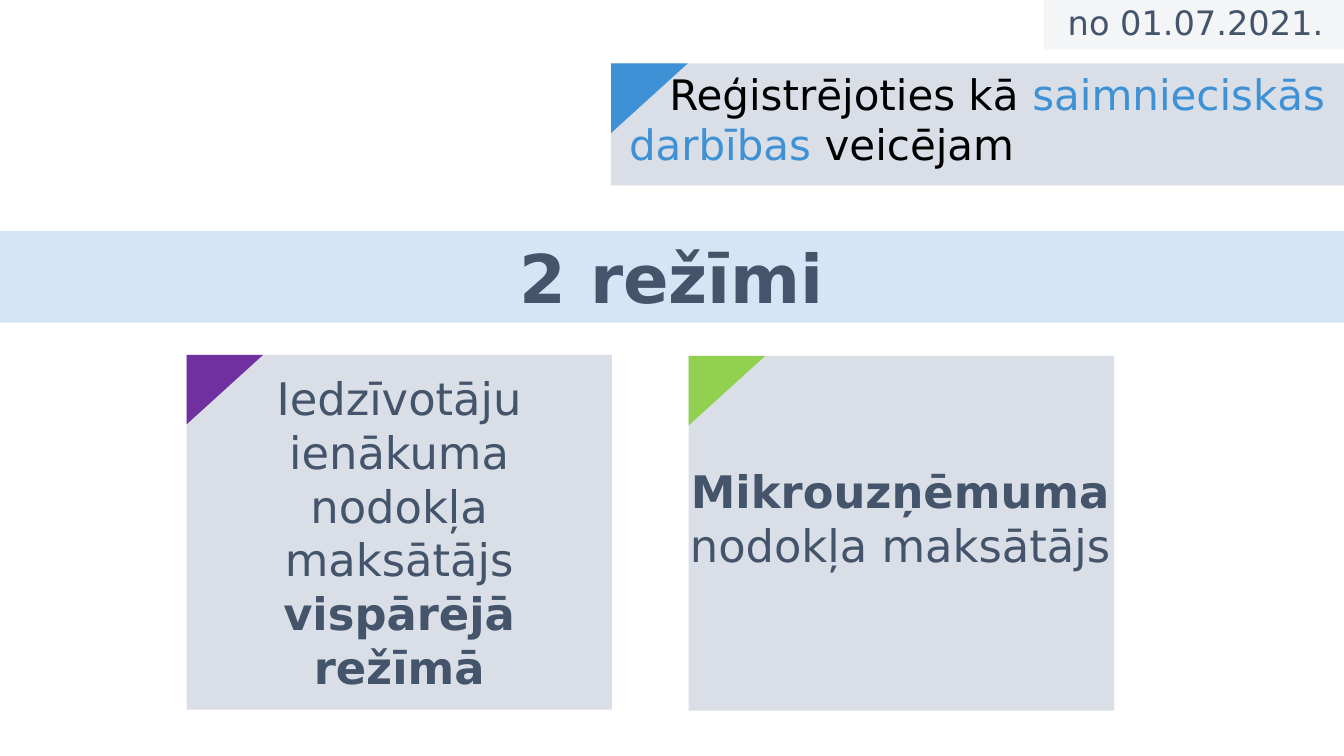
from dataclasses import dataclass

from lxml import etree
from pptx import Presentation
from pptx.dml.color import RGBColor
from pptx.enum.shapes import MSO_SHAPE
from pptx.enum.text import MSO_ANCHOR, MSO_AUTO_SIZE, PP_ALIGN
from pptx.oxml.ns import qn
from pptx.util import Inches, Pt

RECTANGLE, TRIANGLE = MSO_SHAPE.RECTANGLE, MSO_SHAPE.ISOSCELES_TRIANGLE
LEFT, CENTER, RIGHT = PP_ALIGN.LEFT, PP_ALIGN.CENTER, PP_ALIGN.RIGHT
TOP, MIDDLE = MSO_ANCHOR.TOP, MSO_ANCHOR.MIDDLE
NO_AUTOFIT = MSO_AUTO_SIZE.NONE

FONT = "DejaVu Sans"
SLATE, BLACK, BLUE = "44546A", "000000", "3F91D5"
GREY, PURPLE, GREEN = "D6DCE5", "7030A0", "92D050"
SLIDE_WIDTH, SLIDE_HEIGHT = 13.33, 7.5
CORNER_WIDTH, CORNER_HEIGHT = 0.76, 0.69


@dataclass(frozen=True)
class Area:
    """A rectangle on the slide, in inches."""
    left: float
    top: float
    width: float
    height: float

    def lengths(self) -> list:
        """Return the four measures as slide lengths."""
        return [Inches(v) for v in (self.left, self.top, self.width, self.height)]


@dataclass(frozen=True)
class Span:
    """A stretch of text in one format."""
    text: str
    color: str = SLATE
    bold: bool = False


@dataclass(frozen=True)
class Card:
    """A grey panel with a coloured corner and a text box."""
    panel: Area
    corner_color: str
    text_area: Area
    spans: tuple
    size: int
    align: PP_ALIGN = CENTER
    indent: float = 0


CARDS = (
    Card(Area(1.85, 3.52, 4.22, 3.52), PURPLE, Area(1.85, 3.63, 4.22, 3.33),
         (Span("Iedzīvotāju ienākuma nodokļa maksātājs "),
          Span("vispārējā režīmā", bold=True)), 32),
    Card(Area(6.06, 0.63, 7.27, 1.21), BLUE, Area(6.14, 0.63, 7.19, 1.11),
         (Span("Reģistrējoties kā ", BLACK), Span("saimnieciskās darbības ", BLUE),
          Span("veicējam", BLACK)), 30, LEFT, 0.4),
    Card(Area(6.83, 3.53, 4.22, 3.52), GREEN, Area(6.67, 4.55, 4.52, 1.18),
         (Span("Mikrouzņēmuma", bold=True), Span(" nodokļa maksātājs")), 32),
)


def paint(shape, color: str, opacity: int = 100) -> None:
    """Fill a shape with a colour at an opacity in percent."""
    shape.fill.solid()
    shape.fill.fore_color.rgb = RGBColor.from_string(color)
    shape.line.fill.background()
    if opacity < 100:
        tint = shape.fill._xPr.find(qn("a:solidFill"))[0]
        etree.SubElement(tint, qn("a:alpha"), val=str(opacity * 1000))


def write(shape, spans: tuple, size: int, align: PP_ALIGN, anchor: MSO_ANCHOR,
          indent: float = 0, line_spacing: float = 1.0) -> None:
    """Write one paragraph of spans into a shape."""
    frame = shape.text_frame
    settings = {"word_wrap": True, "auto_size": NO_AUTOFIT, "vertical_anchor": anchor}
    for name, value in settings.items():
        setattr(frame, name, value)
    para = frame.paragraphs[0]
    para.alignment, para.line_spacing = align, line_spacing
    if indent:
        para._p.get_or_add_pPr().set("indent", str(Inches(indent)))
    for span in spans:
        run = para.add_run()
        run.text = span.text
        for name, value in {"name": FONT, "size": Pt(size), "bold": span.bold}.items():
            setattr(run.font, name, value)
        run.font.color.rgb = RGBColor.from_string(span.color)


def add_block(slide, kind: MSO_SHAPE, area: Area, color: str, opacity: int = 100):
    """Add a flat preset shape and return it."""
    shape = slide.shapes.add_shape(kind, *area.lengths())
    shape.shadow.inherit = False
    paint(shape, color, opacity)
    return shape


def add_card(slide, card: Card) -> None:
    """Draw a panel, its text and its corner."""
    panel = card.panel
    add_block(slide, RECTANGLE, panel, GREY, 92)
    box = slide.shapes.add_textbox(*card.text_area.lengths())
    write(box, card.spans, card.size, card.align, TOP, card.indent)
    shift = (CORNER_WIDTH - CORNER_HEIGHT) / 2
    corner_area = Area(panel.left + shift, panel.top - shift, CORNER_HEIGHT, CORNER_WIDTH)
    corner = add_block(slide, TRIANGLE, corner_area, card.corner_color)
    corner.adjustments[0] = 0
    corner.rotation = 90


def add_title(slide) -> None:
    """Turn the title into a band across the slide."""
    title = slide.shapes.title
    band = Area(0, 2.29, SLIDE_WIDTH, 0.91).lengths()
    for name, value in zip(("left", "top", "width", "height"), band):
        setattr(title, name, value)
    paint(title, BLUE, 22)
    write(title, (Span("2 režīmi", bold=True),), 48, CENTER, MIDDLE)


def main() -> None:
    """Build the slide and save the deck."""
    deck = Presentation()
    deck.slide_width, deck.slide_height = Inches(SLIDE_WIDTH), Inches(SLIDE_HEIGHT)
    slide = deck.slides.add_slide(deck.slide_layouts[5])
    add_title(slide)
    for card in CARDS:
        add_card(slide, card)
    date_tag = add_block(slide, RECTANGLE, Area(10.35, -0.01, 2.98, 0.5), GREY, 28)
    write(date_tag, (Span("no 01.07.2021. "),), 24, RIGHT, MIDDLE, line_spacing=0.9)
    deck.save("out.pptx")


if __name__ == "__main__":
    main()
